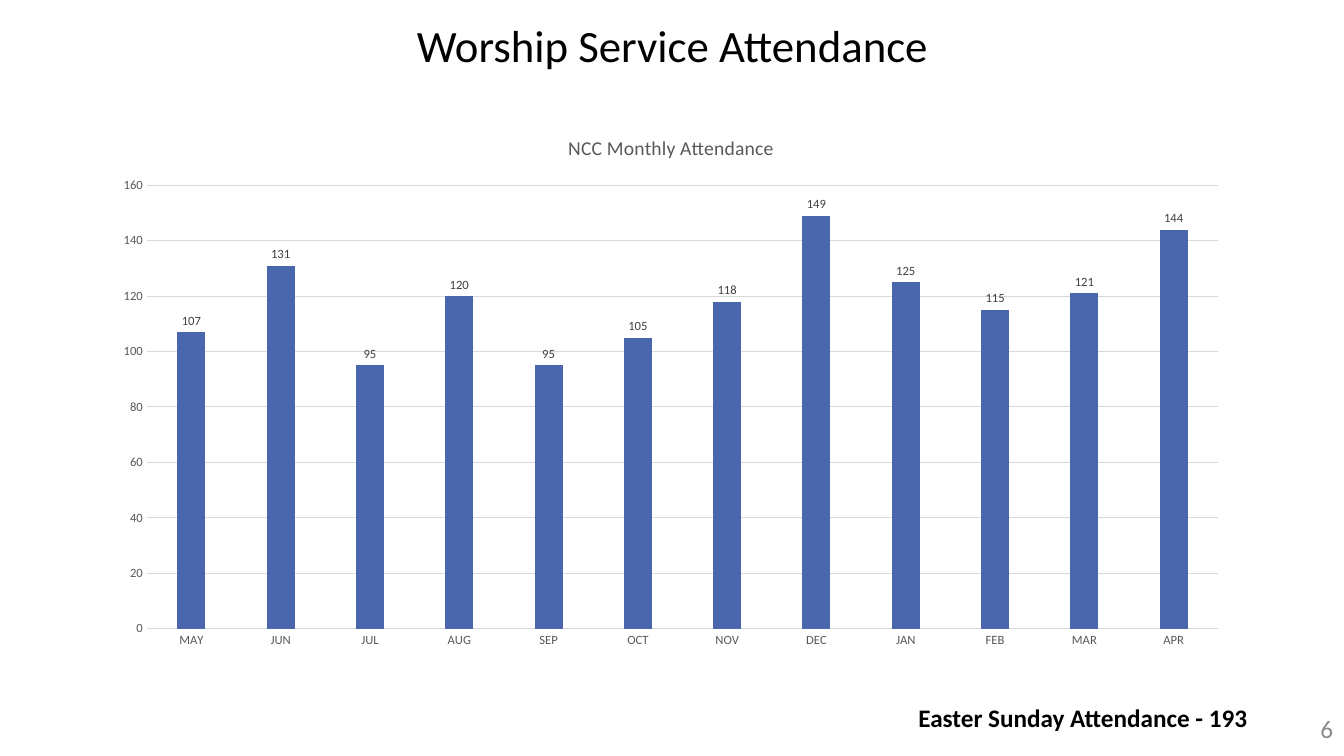
from lxml import etree
from pptx import Presentation
from pptx.chart.data import CategoryChartData
from pptx.dml.color import RGBColor
from pptx.enum import chart as ch, text as tx
from pptx.oxml import ns
from pptx.util import Inches, Pt

HEADING = "Worship Service Attendance"
CHART_HEADING = "NCC Monthly Attendance"
EASTER_NOTE = "Easter Sunday Attendance - 193"
PAGE = "6"
ATTENDANCE = {
    "MAY": 107, "JUN": 131, "JUL": 95, "AUG": 120, "SEP": 95, "OCT": 105,
    "NOV": 118, "DEC": 149, "JAN": 125, "FEB": 115, "MAR": 121, "APR": 144,
}

FONT = "Calibri"
BLACK = RGBColor(0x00, 0x00, 0x00)
BLUE = RGBColor(0x4A, 0x66, 0xAC)
DARK = RGBColor(0x40, 0x40, 0x40)
GRAY = RGBColor(0x59, 0x59, 0x59)
PAGE_GRAY = RGBColor(0x8C, 0x8C, 0x8C)
RULE = RGBColor(0xD9, 0xD9, 0xD9)


def style(font, size, color, bold=False):
    font.name = FONT
    font.size = Pt(size)
    font.color.rgb = color
    font.bold = bold


def rule(line):
    line.color.rgb = RULE
    line.width = Pt(0.75)


def add_heading(slide):
    heading = slide.shapes.title
    heading.left, heading.top = Inches(0.92), Inches(0.1)
    heading.width, heading.height = Inches(11.5), Inches(0.75)
    frame = heading.text_frame
    frame.text = HEADING
    frame.vertical_anchor = tx.MSO_ANCHOR.MIDDLE
    paragraph = frame.paragraphs[0]
    paragraph.alignment = tx.PP_ALIGN.CENTER
    paragraph.line_spacing = 0.9
    style(paragraph.font, 32, BLACK)


def add_attendance(slide):
    data = CategoryChartData(number_format="0")
    data.categories = list(ATTENDANCE)
    data.add_series("Series 1", list(ATTENDANCE.values()))
    attendance = slide.shapes.add_chart(
        ch.XL_CHART_TYPE.COLUMN_CLUSTERED,
        Inches(1), Inches(1.14), Inches(11.31), Inches(5.39), data,
    ).chart
    style(attendance.font, 10, BLACK)
    attendance.has_legend = False
    attendance.chart_title.text_frame.text = CHART_HEADING
    attendance.chart_title.include_in_layout = False
    style(attendance.chart_title.text_frame.paragraphs[0].font, 14, GRAY)

    months, counts = attendance.category_axis, attendance.value_axis
    for axis in (months, counts):
        axis.major_tick_mark = axis.minor_tick_mark = ch.XL_TICK_MARK.NONE
        style(axis.tick_labels.font, 9, GRAY)
    rule(months.format.line)
    counts.format.line.fill.background()
    counts.minimum_scale, counts.maximum_scale, counts.major_unit = 0, 160, 20
    rule(counts.major_gridlines.format.line)

    bars = attendance.plots[0]
    bars.gap_width, bars.overlap = 219, -27
    bars.vary_by_categories = False
    series = bars.series[0]
    series.format.fill.solid()
    series.format.fill.fore_color.rgb = BLUE
    labels = series.data_labels
    labels.show_value = True
    labels.position = ch.XL_LABEL_POSITION.OUTSIDE_END
    labels.number_format, labels.number_format_is_linked = "0", False
    style(labels.font, 9, DARK)


def add_easter_note(slide):
    frame = slide.shapes.add_textbox(
        Inches(9.01), Inches(6.92), Inches(3.5), Inches(0.4)).text_frame
    frame.word_wrap = False
    frame.auto_size = tx.MSO_AUTO_SIZE.SHAPE_TO_FIT_TEXT
    frame.text = EASTER_NOTE
    style(frame.paragraphs[0].font, 18, BLACK, bold=True)


def add_page(slide):
    frame = slide.shapes.add_textbox(
        Inches(10.32), Inches(7.03), Inches(3), Inches(0.4)).text_frame
    frame.word_wrap = True
    frame.vertical_anchor = tx.MSO_ANCHOR.MIDDLE
    paragraph = frame.paragraphs[0]
    paragraph.alignment = tx.PP_ALIGN.RIGHT
    run = paragraph.add_run()
    run.text = PAGE
    style(run.font, 18, PAGE_GRAY)


def main():
    deck = Presentation()
    deck.slide_width, deck.slide_height = Inches(13.33), Inches(7.5)
    slide = deck.slides.add_slide(deck.slide_layouts.get_by_name("Title Only"))
    add_heading(slide)
    add_page(slide)
    add_easter_note(slide)
    add_attendance(slide)
    deck.save("out.pptx")


if __name__ == "__main__":
    main()
